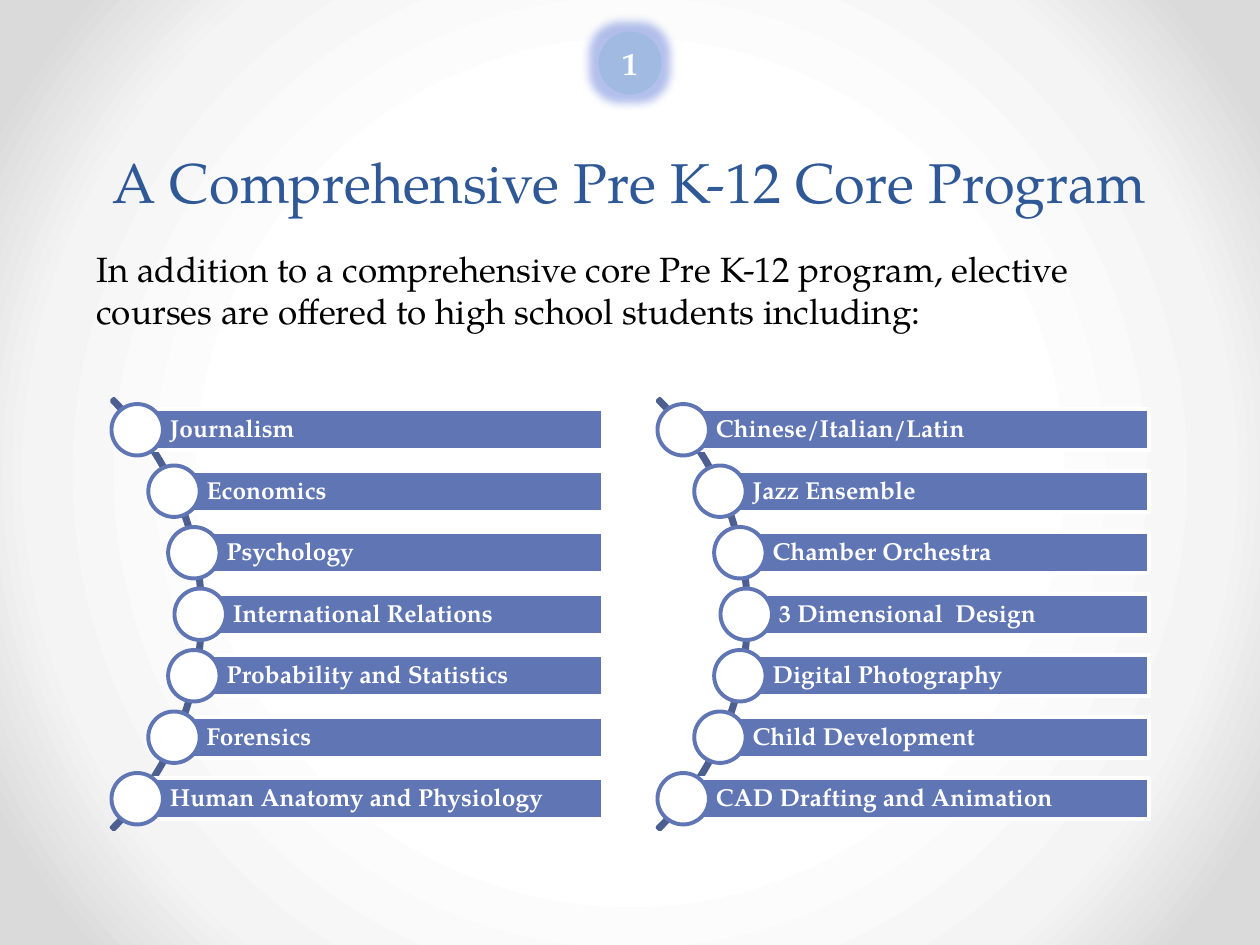
"""Build a slide listing high school electives along two curved lists."""
import dataclasses
import math

import lxml.etree
import pptx
import pptx.dml.color
import pptx.enum.shapes
import pptx.enum.text
import pptx.oxml
import pptx.util

Pt = pptx.util.Pt
Kind = pptx.enum.shapes.MSO_SHAPE
Align = pptx.enum.text.PP_ALIGN
Anchor = pptx.enum.text.MSO_ANCHOR
NS = 'xmlns:a="http://schemas.openxmlformats.org/drawingml/2006/main"'


@dataclasses.dataclass(frozen=True)
class Theme:
    """Colours, type sizes and line width of the slide."""
    font: str = "TeX Gyre Pagella"
    white: str = "FFFFFF"
    black: str = "000000"
    title: str = "2F5897"
    badge: str = "A0BAE1"
    glow: str = "4161CF"
    bar: str = "6076B4"
    arc: str = "4D5E90"
    stops: tuple = ((50, "FFFFFF"), (76, "F4F4F4"), (92, "DADADA"))
    head: int = 32
    body: int = 20
    num: int = 18
    item: int = 14
    line: float = 2.25


THEME = Theme()
LEFT = ("Journalism", "Economics", "Psychology", "International Relations",
        "Probability and Statistics", "Forensics",
        "Human Anatomy and Physiology")
RIGHT = ("Chinese/Italian/Latin", "Jazz Ensemble", "Chamber Orchestra",
         "3 Dimensional  Design", "Digital Photography", "Child Development",
         "CAD Drafting and Animation")


def rgb(code):
    """Return the colour for a hex code."""
    return pptx.dml.color.RGBColor.from_string(code)


def apply(item, values):
    """Set each named value on an object."""
    for name, value in values.items():
        setattr(item, name, value)


def write(shape, text, size, color, bold=False, frame=None, para=None):
    """Put one styled paragraph into a shape."""
    body = shape.text_frame
    apply(body, {"word_wrap": True, **(frame or {})})
    first = body.paragraphs[0]
    apply(first, para or {})
    run = first.add_run()
    run.text = text
    apply(run.font, {"name": THEME.font, "size": Pt(size), "bold": bold})
    run.font.color.rgb = rgb(color)


def draw(shapes, kind, box, fill=None, line=None):
    """Add a preset shape with the given fill and line."""
    shape = shapes.add_shape(kind, *map(Pt, box))
    shape.shadow.inherit = False
    if fill:
        shape.fill.solid()
        shape.fill.fore_color.rgb = rgb(fill)
    else:
        shape.fill.background()
    if line:
        shape.line.color.rgb = rgb(line)
        shape.line.width = Pt(THEME.line)
    else:
        shape.line.fill.background()
    return shape


def paint(slide):
    """Fill the background with a radial gradient."""
    slide.background.fill.gradient()
    old = next(slide.background._cSld.iter("{*}gradFill"))
    stops = "".join(f'<a:gs pos="{pos * 1000}"><a:srgbClr val="{code}"/></a:gs>'
                    for pos, code in THEME.stops)
    new = pptx.oxml.parse_xml(
        f'<a:gradFill {NS} rotWithShape="1"><a:gsLst>{stops}</a:gsLst>'
        '<a:path path="circle"><a:fillToRect l="50000" t="50000" r="50000" '
        'b="50000"/></a:path></a:gradFill>')
    old.getparent().replace(old, new)


def badge(slide, box):
    """Place the glowing page number."""
    disc = draw(slide.shapes, Kind.OVAL, box, THEME.badge)
    glow = pptx.oxml.parse_xml(
        f'<a:glow {NS} rad="{Pt(10)}"><a:srgbClr val="{THEME.glow}">'
        '<a:alpha val="40000"/></a:srgbClr></a:glow>')
    next(disc._element.spPr.iter("{*}effectLst")).append(glow)
    edges = dict.fromkeys(("margin_left", "margin_top", "margin_right",
                           "margin_bottom"), 0)
    write(disc, "1", THEME.num, THEME.white, True,
          {"vertical_anchor": Anchor.MIDDLE, **edges},
          {"alignment": Align.CENTER})


def title(slide, box):
    """Place the slide title."""
    area = slide.shapes.add_textbox(*map(Pt, box))
    write(area, "A Comprehensive Pre K-12 Core Program", THEME.head,
          THEME.title, frame={"vertical_anchor": Anchor.BOTTOM},
          para={"alignment": Align.CENTER, "line_spacing": Pt(58)})


def intro(slide, box):
    """Place the opening sentence."""
    area = slide.shapes.add_textbox(*map(Pt, box))
    write(area, "In addition to a comprehensive core Pre K-12 program, "
          "elective courses are offered to high school students including:",
          THEME.body, THEME.black)


def curve(slide, box, names):
    """Place a list of bars whose round nodes follow an arc."""
    left, top, width, height = box
    shapes = slide.shapes.add_group_shape().shapes
    outer, track, node, thick = 174, 172.4, 29.4, 23.6
    hub, mid, step = left - 121, top + height / 2, height / len(names)
    arc = draw(shapes, Kind.BLOCK_ARC,
               (hub - outer, mid - outer, 2 * outer, 2 * outer),
               line=THEME.arc)
    for index, value in enumerate((189, 27, 0.005)):
        arc.adjustments[index] = value
    arc.line._ln.set("cap", "rnd")
    frame = {"vertical_anchor": Anchor.MIDDLE, "margin_left": Pt(18.7),
             "margin_top": Pt(2.9), "margin_right": Pt(2.9),
             "margin_bottom": Pt(2.9)}
    para = {"alignment": Align.LEFT, "line_spacing": 0.9}
    for index, name in enumerate(names):
        y = top + step * (index + 0.5)
        x = hub + math.sqrt(track ** 2 - (y - mid) ** 2)
        bar = draw(shapes, Kind.RECTANGLE,
                   (x, y - thick / 2, left + width - x, thick),
                   THEME.bar, THEME.white)
        write(bar, name, THEME.item, THEME.white, True, frame, para)
        draw(shapes, Kind.OVAL, (x - node / 2, y - node / 2, node, node),
             THEME.white, THEME.bar)


def main():
    """Build and save the slide."""
    deck = pptx.Presentation()
    apply(deck, {"slide_width": Pt(720), "slide_height": Pt(540)})
    slide = deck.slides.add_slide(deck.slide_layouts[6])
    paint(slide)
    badge(slide, (342, 18, 36, 36))
    title(slide, (43.2, 70.5, 633, 55.5))
    intro(slide, (48, 138, 624, 55.5))
    for index, names in enumerate((LEFT, RIGHT)):
        curve(slide, (63 + 312 * index, 228, 281.6, 246), names)
    deck.save("out.pptx")


if __name__ == "__main__":
    main()
